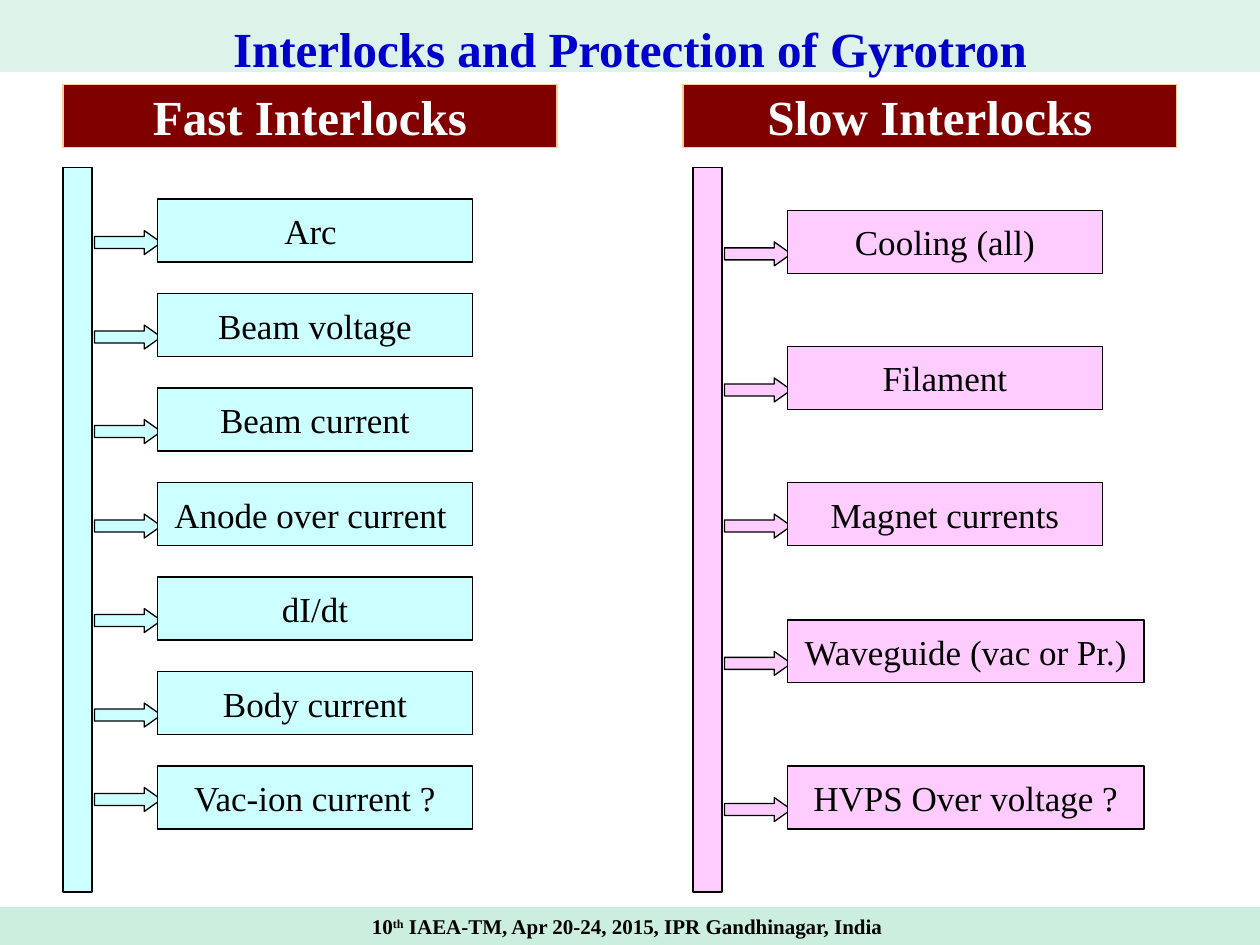
from pptx import Presentation
from pptx.dml.color import RGBColor
from pptx.enum.shapes import MSO_SHAPE
from pptx.enum.text import MSO_ANCHOR, MSO_AUTO_SIZE, PP_ALIGN
from pptx.util import Inches, Pt

FONT = "Times New Roman"
BOX_H = 0.5


def rgb(value):
    return RGBColor.from_string(value)


def add_block(s, kind, x, y, w, h, fill, line=None):
    sp = s.shapes.add_shape(kind, Inches(x), Inches(y), Inches(w), Inches(h))
    sp.shadow.inherit = False
    sp.fill.solid()
    sp.fill.fore_color.rgb = rgb(fill)
    if line:
        sp.line.color.rgb = rgb(line)
        sp.line.width = Pt(0.75)
    else:
        sp.line.fill.background()
    return sp


def format_text(tf, size, color, bold=False):
    for p in tf.paragraphs:
        p.alignment = PP_ALIGN.CENTER
        for r in p.runs:
            r.font.name = FONT
            r.font.size = Pt(size)
            r.font.bold = bold
            r.font.color.rgb = rgb(color)


def add_label(s, text, x, y, w, h, fill, line, size, color, bold=False):
    sp = add_block(s, MSO_SHAPE.RECTANGLE, x, y, w, h, fill, line)
    tf = sp.text_frame
    tf.text = text
    tf.word_wrap = False
    tf.vertical_anchor = MSO_ANCHOR.MIDDLE
    format_text(tf, size, color, bold)


def add_title(s, text, x, y, w, h):
    sp = s.shapes.title
    sp.left, sp.top, sp.width, sp.height = (Inches(v) for v in (x, y, w, h))
    sp.fill.solid()
    sp.fill.fore_color.rgb = rgb("DDF3EA")
    tf = sp.text_frame
    tf.text = text
    tf.word_wrap = True
    tf.auto_size = MSO_AUTO_SIZE.NONE
    tf.vertical_anchor = MSO_ANCHOR.TOP
    tf.margin_left = tf.margin_right = Inches(0.02)
    tf.margin_top = tf.margin_bottom = Inches(0.01)
    tf.paragraphs[0].line_spacing = 1.3
    format_text(tf, 28, "0000CC", bold=True)


def add_header(s, text, x, y, w, h):
    add_label(s, text, x, y, w, h, "800000", "FFCC99", 28, "FFFFFF", bold=True)


def add_interlocks(s, x, y, h, fill, items):
    """Vertical bus with an arrow to each (text, top, width, arrow drop) box."""
    add_block(s, MSO_SHAPE.RECTANGLE, x, y, 0.23, h, fill, "000000")
    for text, top, width, drop in items:
        arrow = add_block(s, MSO_SHAPE.RIGHT_ARROW, x + 0.25, top + drop,
                          0.53, 0.19, fill, "000000")
        arrow.adjustments[0] = 0.5
        arrow.adjustments[1] = 0.708
        add_label(s, text, x + 0.75, top, width, BOX_H, fill, "000000",
                  20, "000000")


def add_footer(s, x, y, w, h):
    sp = add_block(s, MSO_SHAPE.RECTANGLE, x, y, w, h, "CCEEDF")
    tf = sp.text_frame
    tf.word_wrap = True
    tf.vertical_anchor = MSO_ANCHOR.TOP
    p = tf.paragraphs[0]
    for text in ("10", "th", " IAEA-TM, Apr 20-24, 2015, IPR Gandhinagar, India "):
        r = p.add_run()
        r.text = text
    format_text(tf, 12, "000000", bold=True)
    # Superscript ordinal
    p.runs[1]._r.get_or_add_rPr().set("baseline", "30000")


def main():
    prs = Presentation()
    prs.slide_width, prs.slide_height = Inches(10), Inches(7.5)
    s = prs.slides.add_slide(prs.slide_layouts[5])

    add_title(s, "Interlocks and Protection of Gyrotron", 0, 0, 10, 0.57)

    # Fast interlocks: evenly spaced, last arrow slightly higher
    fast = ["Arc ", "Beam voltage", "Beam current", "Anode over current ",
            "dI/dt", "Body current", "Vac-ion current ?"]
    fast_items = [(text, 1.58 + 0.75 * i, 2.5,
                   0.17 if i == len(fast) - 1 else 0.25)
                  for i, text in enumerate(fast)]
    add_interlocks(s, 0.5, 1.33, 5.75, "CCFFFF", fast_items)

    # Slow interlocks: wider boxes for the long labels
    slow = [("Cooling (all)", 1.67, 2.5), ("Filament", 2.75, 2.5),
            ("Magnet currents", 3.83, 2.5),
            ("Waveguide (vac or Pr.)", 4.92, 2.83),
            ("HVPS Over voltage ?", 6.08, 2.83)]
    add_interlocks(s, 5.5, 1.33, 5.75, "FFCCFF",
                   [(*item, 0.25) for item in slow])

    # Column headers
    for text, x in (("Fast Interlocks", 0.5), ("Slow Interlocks", 5.42)):
        add_header(s, text, x, 0.67, 3.92, BOX_H)

    add_footer(s, 0, 7.2, 10, 0.3)
    prs.save("out.pptx")


if __name__ == "__main__":
    main()
